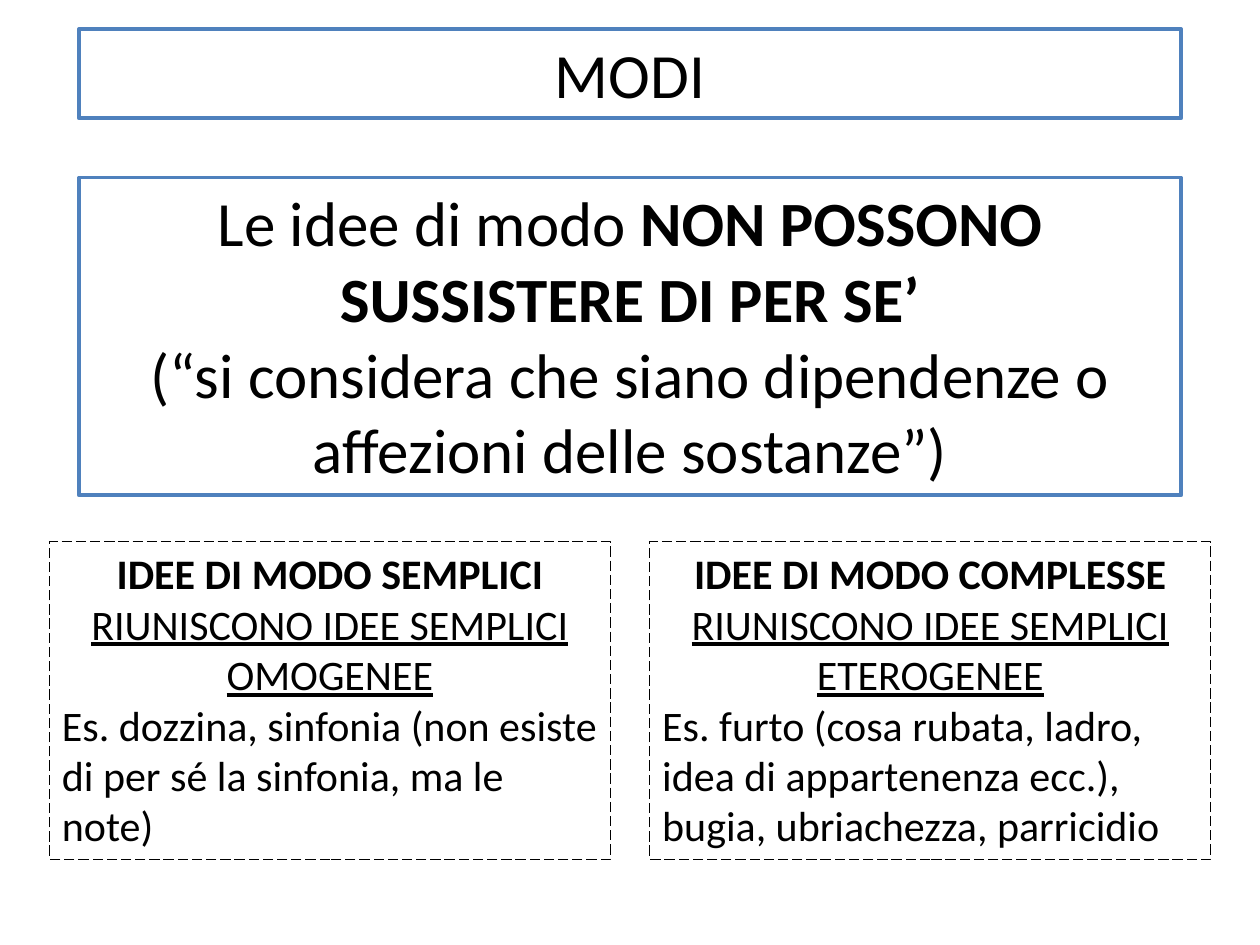
"""Build the slide on ideas of mode: title, definition and two kinds compared."""
import pptx
import pptx.util
import pptx.dml.color
import pptx.enum.dml
import pptx.enum.shapes
import pptx.enum.text

Pt = pptx.util.Pt
ALIGN = pptx.enum.text.PP_ALIGN
COLORS = {"text": "000000", "fill": "FFFFFF", "border": "4F81BD", "dash": "000000"}


def rgb(name):
    return pptx.dml.color.RGBColor.from_string(COLORS[name])


def add_box(paragraphs, left, top, width, height, size, line, weight, fill=None, dash=None):
    sp = s.shapes.add_shape(pptx.enum.shapes.MSO_SHAPE.RECTANGLE,
                            Pt(left), Pt(top), Pt(width), Pt(height))
    sp.shadow.inherit = False
    if fill:
        sp.fill.solid()
        sp.fill.fore_color.rgb = rgb(fill)
    else:
        sp.fill.background()
    sp.line.color.rgb = rgb(line)
    sp.line.width = Pt(weight)
    if dash:
        sp.line.dash_style = dash
    tf = sp.text_frame
    tf.word_wrap = True
    tf.auto_size = pptx.enum.text.MSO_AUTO_SIZE.SHAPE_TO_FIT_TEXT
    tf.vertical_anchor = pptx.enum.text.MSO_ANCHOR.TOP
    for i, (align, runs) in enumerate(paragraphs):
        p = tf.add_paragraph() if i else tf.paragraphs[0]
        p.alignment = align
        for text, style in runs:
            r = p.add_run()
            r.text = text
            r.font.name = "Calibri"
            r.font.size = Pt(size)
            r.font.color.rgb = rgb("text")
            r.font.bold = style == "bold"
            r.font.underline = style == "underline"


prs = pptx.Presentation()
prs.slide_width, prs.slide_height = Pt(720), Pt(540)
s = prs.slides.add_slide(prs.slide_layouts[6])

title = [(ALIGN.CENTER, [("MODI", "")])]
definition = [
    (ALIGN.CENTER, [("Le idee di modo ", ""), ("NON POSSONO SUSSISTERE DI PER SE’", "bold")]),
    (ALIGN.CENTER, [("(“si considera che siano dipendenze o affezioni delle sostanze”)", "")]),
]
for paragraphs, top, height in [(title, 16.7, 50.9), (definition, 101.5, 181.5)]:
    add_box(paragraphs, 45, top, 630, height, size=36, line="border", weight=2, fill="fill")

kinds = [
    ("IDEE DI MODO SEMPLICI", "RIUNISCONO IDEE SEMPLICI OMOGENEE",
     "Es. dozzina, sinfonia (non esiste di per sé la sinfonia, ma le note)"),
    ("IDEE DI MODO COMPLESSE", "RIUNISCONO IDEE SEMPLICI ETEROGENEE",
     "Es. furto (cosa rubata, ladro, idea di appartenenza ecc.), bugia, ubriachezza, parricidio"),
]
for i, (name, rule, example) in enumerate(kinds):
    paragraphs = [(ALIGN.CENTER, [(name, "bold")]),
                  (ALIGN.CENTER, [(rule, "underline")]),
                  (ALIGN.LEFT, [(example, "")])]
    add_box(paragraphs, 28.3 + 343 * i, 309.5, 320.4, 181.5, size=24, line="dash",
            weight=0.75, dash=pptx.enum.dml.MSO_LINE.LONG_DASH)

prs.save("out.pptx")
